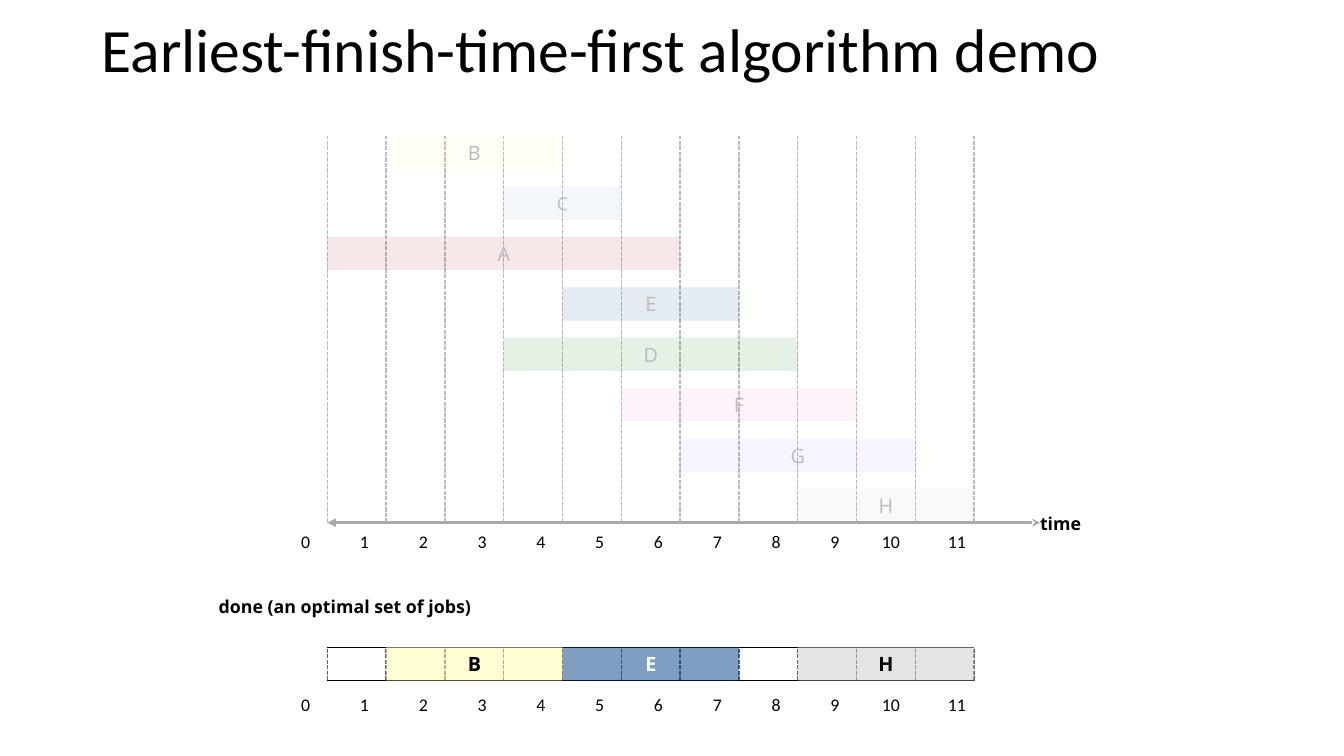
from dataclasses import dataclass

from pptx import Presentation
from pptx.dml.color import RGBColor
from pptx.enum.dml import MSO_LINE
from pptx.enum.shapes import MSO_CONNECTOR as CONN, MSO_SHAPE as SHAPE
from pptx.enum.text import MSO_ANCHOR as ANCHOR, MSO_AUTO_SIZE as FIT, PP_ALIGN as ALIGN
from pptx.oxml.ns import qn
from pptx.util import Cm, Pt
from lxml.etree import SubElement


@dataclass(frozen=True)
class Theme:
    black: str = "000000"
    white: str = "FFFFFF"
    faded: str = "BABABA"
    tick: str = "606060"
    axis: str = "AAAAAA"
    head_font: str = "Calibri"
    label_font: str = "Open Sans"
    title: float = 44
    job: float = 14.1
    small: float = 12.7


T = Theme()
HOURS = 11
BAR_H = 0.84
ROW_STEP = 1.27

JOB_COLOURS = {"A": "B6192B", "B": "FFFDA9", "C": "92B4DB", "D": "007600",
               "E": "003F83", "F": "FF8AD8", "G": "4834FF", "H": "CBCBCB"}
JOB_TIMES = {"B": (1, 4), "C": (3, 5), "A": (0, 6), "E": (4, 7),
             "D": (3, 8), "F": (5, 9), "G": (6, 10), "H": (8, 11)}
CHOSEN = {"B": T.black, "E": T.white, "H": T.black}  # job: label colour


def write(tf, text, size, font, colour, bold=False, align=ALIGN.LEFT):
    p = tf.paragraphs[0]
    p.alignment = align
    r = p.add_run()
    r.text = text
    for name, value in {"size": Pt(size), "name": font, "bold": bold}.items():
        setattr(r.font, name, value)
    r.font.color.rgb = RGBColor.from_string(colour)
    return p


def set_frame(tf, **extra):
    margins = {f"margin_{side}": 0 for side in ("left", "top", "right", "bottom")}
    for name, value in {**margins, **extra}.items():
        setattr(tf, name, value)


def add_label(s, text, x, y, w, font=T.label_font, bold=True):
    tf = s.shapes.add_textbox(Cm(x), Cm(y), Cm(w), Cm(0.53)).text_frame
    set_frame(tf, word_wrap=True, auto_size=FIT.SHAPE_TO_FIT_TEXT)
    write(tf, text, T.small, font, T.black, bold)


def add_line(s, x1, y1, x2, y2, colour, width=1, dashed=False):
    line = s.shapes.add_connector(CONN.STRAIGHT, Cm(x1), Cm(y1), Cm(x2), Cm(y2))
    line.line.color.rgb = RGBColor.from_string(colour)
    line.line.width = Pt(width)
    if dashed:
        line.line.dash_style = MSO_LINE.SQUARE_DOT
    SubElement(line._element.spPr, qn("a:effectLst"))
    return line


def add_ticks(s, x, y, w, h, colour):
    for i in range(HOURS + 1):
        tick_x = x + i * w / HOURS
        add_line(s, tick_x, y + h, tick_x, y, colour, dashed=True)


def add_hours(s, x, y, w):
    for i in range(HOURS + 1):
        nudge = 0.84 if i == 10 else 0.66
        add_label(s, str(i), x + i * w / HOURS - nudge, y, 1.32, T.head_font, False)


def add_job(s, job, x, y, w, alpha, colour, bold=False, size=T.job):
    start, end = JOB_TIMES[job]
    hour = w / HOURS
    bar = s.shapes.add_shape(SHAPE.RECTANGLE, Cm(x + start * hour), Cm(y),
                             Cm((end - start) * hour), Cm(BAR_H))
    bar.shadow.inherit = False
    bar.line.fill.background()
    bar.fill.solid()
    bar.fill.fore_color.rgb = RGBColor.from_string(JOB_COLOURS[job])
    rgb = bar._element.spPr.find(f"{qn('a:solidFill')}/{qn('a:srgbClr')}")
    SubElement(rgb, qn("a:alpha"), val=str(alpha * 1000))
    set_frame(bar.text_frame, vertical_anchor=ANCHOR.MIDDLE)
    write(bar.text_frame, job, size, T.label_font, colour, bold, ALIGN.CENTER)


def add_title(s, x, y, w, h):
    title = s.shapes.title
    box = {"left": x, "top": y, "width": w, "height": h}
    for name, value in box.items():
        setattr(title, name, Cm(value))
    tf = title.text_frame
    tf.vertical_anchor = ANCHOR.MIDDLE
    tf.auto_size = FIT.NONE
    p = write(tf, "Earliest-finish-time-first algorithm demo", T.title, T.head_font, T.black)
    p.line_spacing = 0.9


def add_schedule(s, x, y, w, h):
    add_ticks(s, x, y, w, h, T.faded)
    for row, job in enumerate(JOB_TIMES):
        size = T.small if job == "C" else T.job
        add_job(s, job, x, y + row * ROW_STEP, w, 5 if job == "G" else 10, T.faded, size=size)
    add_hours(s, x, y + h + 0.21, w)

    # Time axis, with an arrowhead at each end
    axis_end = x + w + 1.66
    axis = add_line(s, x, y + h, axis_end, y + h, T.axis, 2)
    ln = axis.line._get_or_add_ln()
    SubElement(ln, qn("a:headEnd"), type="triangle")
    SubElement(ln, qn("a:tailEnd"), type="stealth")
    add_label(s, "time", axis_end, y + h - 0.25, 2.36)


def add_done(s, x, y, w, h):
    add_label(s, "done (an optimal set of jobs)", x - 2.74, y - 1.3, 6.9)
    add_ticks(s, x, y, w, h, T.tick)
    for edge in (y, y + h):
        add_line(s, x, edge, x + w, edge, T.black)
    for job, colour in CHOSEN.items():
        add_job(s, job, x, y, w, 50, colour, True)
    add_hours(s, x, y + h + 0.33, w)


def main():
    prs = Presentation()
    prs.slide_width, prs.slide_height = Cm(33.87), Cm(19.05)
    s = prs.slides.add_slide(prs.slide_layouts[5])
    add_title(s, 2.31, 0.33, 29.21, 2.01)
    add_schedule(s, 8.25, 3.43, 16.3, 9.74)
    add_done(s, 8.25, 16.31, 16.3, BAR_H)
    prs.save("out.pptx")


if __name__ == "__main__":
    main()
